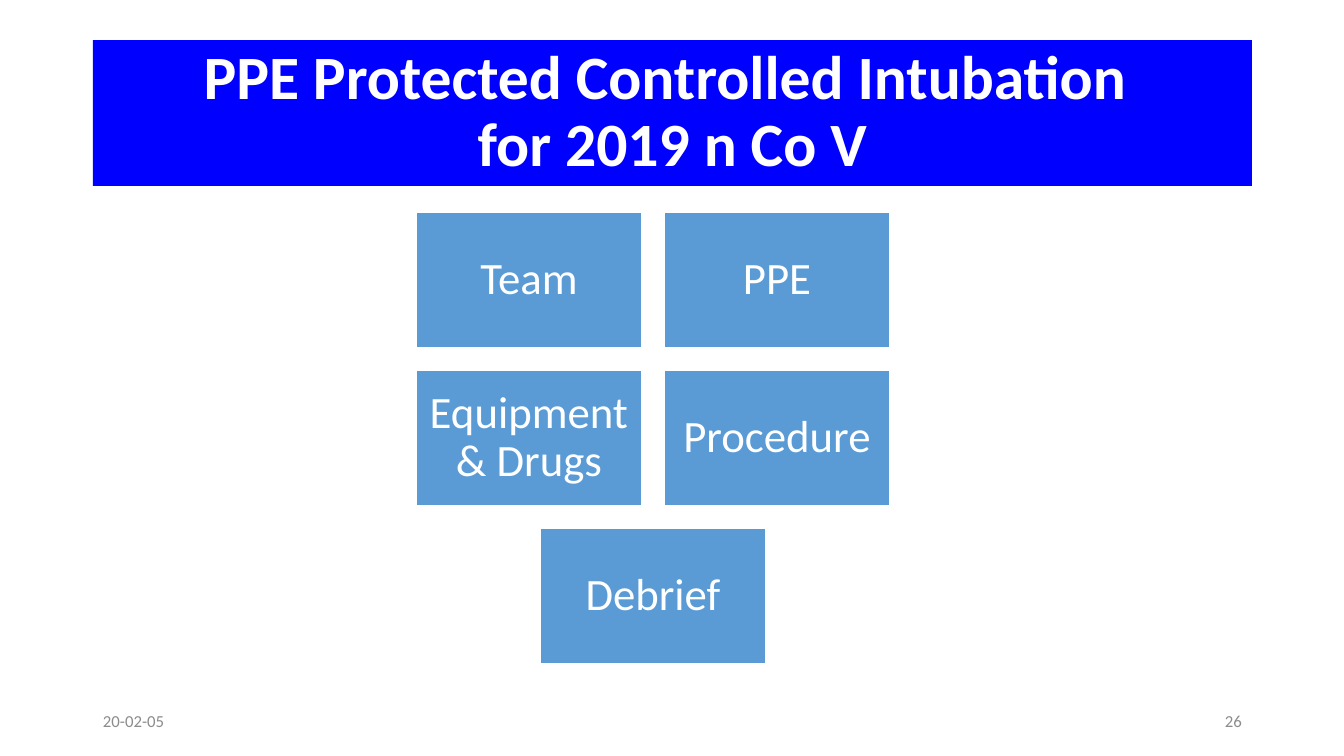
from pptx import Presentation
from pptx import util as u
from pptx.dml.color import RGBColor
from pptx.enum import shapes, text

WIDTH, HEIGHT = 1344, 756
PX = u.Inches(7.5) / HEIGHT

WHITE = RGBColor(0xFF, 0xFF, 0xFF)
BANNER_BLUE = RGBColor(0x00, 0x00, 0xFF)
CARD_BLUE = RGBColor(0x5B, 0x9B, 0xD5)
FOOTER_GREY = RGBColor(0x8C, 0x8C, 0x8C)

LEFT, CENTER, RIGHT = text.PP_ALIGN.LEFT, text.PP_ALIGN.CENTER, text.PP_ALIGN.RIGHT


def px(length):
    return u.Emu(round(length * PX))


class SlideBuilder:
    font = "Calibri"

    def __init__(self, page):
        self.page = page

    def label(self, box, lines, size, color, align, bold=False, inset=10, spacing=0.9):
        frame = box.text_frame
        frame.word_wrap = True
        frame.vertical_anchor = text.MSO_ANCHOR.MIDDLE
        frame.margin_left = frame.margin_right = px(inset)
        para = frame.paragraphs[0]
        para.alignment = align
        para.line_spacing = spacing
        for number, line in enumerate(lines):
            if number:
                para.add_line_break()
            span = para.add_run()
            span.text = line
            span.font.name = self.font
            span.font.size = u.Pt(size)
            span.font.bold = bold
            span.font.color.rgb = color

    def block(self, x, y, w, h, fill, outline=None):
        box = self.page.shapes.add_shape(
            shapes.MSO_SHAPE.RECTANGLE, px(x), px(y), px(w), px(h))
        box.shadow.inherit = False
        box.fill.solid()
        box.fill.fore_color.rgb = fill
        if outline is None:
            box.line.fill.background()
        else:
            box.line.color.rgb = outline
            box.line.width = u.Pt(1)
        return box

    def banner(self, x, y, w, h, lines):
        box = self.block(x, y, w, h, BANNER_BLUE)
        self.label(box, lines, 44, WHITE, CENTER, bold=True)

    def card(self, x, y, w, h, topic):
        box = self.block(x, y, w, h, CARD_BLUE, WHITE)
        self.label(box, [topic], 32, WHITE, CENTER, inset=13)

    def footer(self, x, note, align):
        box = self.page.shapes.add_textbox(px(x), px(701), px(302), px(40))
        self.label(box, [note], 12, FOOTER_GREY, align, spacing=1.0)


def main():
    deck = Presentation()
    deck.slide_width, deck.slide_height = px(WIDTH), px(HEIGHT)
    slide = SlideBuilder(deck.slides.add_slide(deck.slide_layouts[6]))

    # Title banner
    slide.banner(93, 40, 1159, 146,
                 ["PPE Protected Controlled Intubation ", "for 2019 n Co V"])

    # Topic cards, each row centred on the same axis
    rows = [["Team", "PPE"], ["Equipment & Drugs", "Procedure"], ["Debrief"]]
    card_w, card_h, gap, axis, top = 226, 136, 22, 653, 212
    for row, topics in enumerate(rows):
        row_w = len(topics) * (card_w + gap) - gap
        for column, topic in enumerate(topics):
            slide.card(axis - row_w // 2 + column * (card_w + gap),
                       top + row * (card_h + gap), card_w, card_h, topic)

    # Date and page number
    slide.footer(93, "20-02-05", LEFT)
    slide.footer(950, "26", RIGHT)

    deck.save("out.pptx")


if __name__ == "__main__":
    main()
